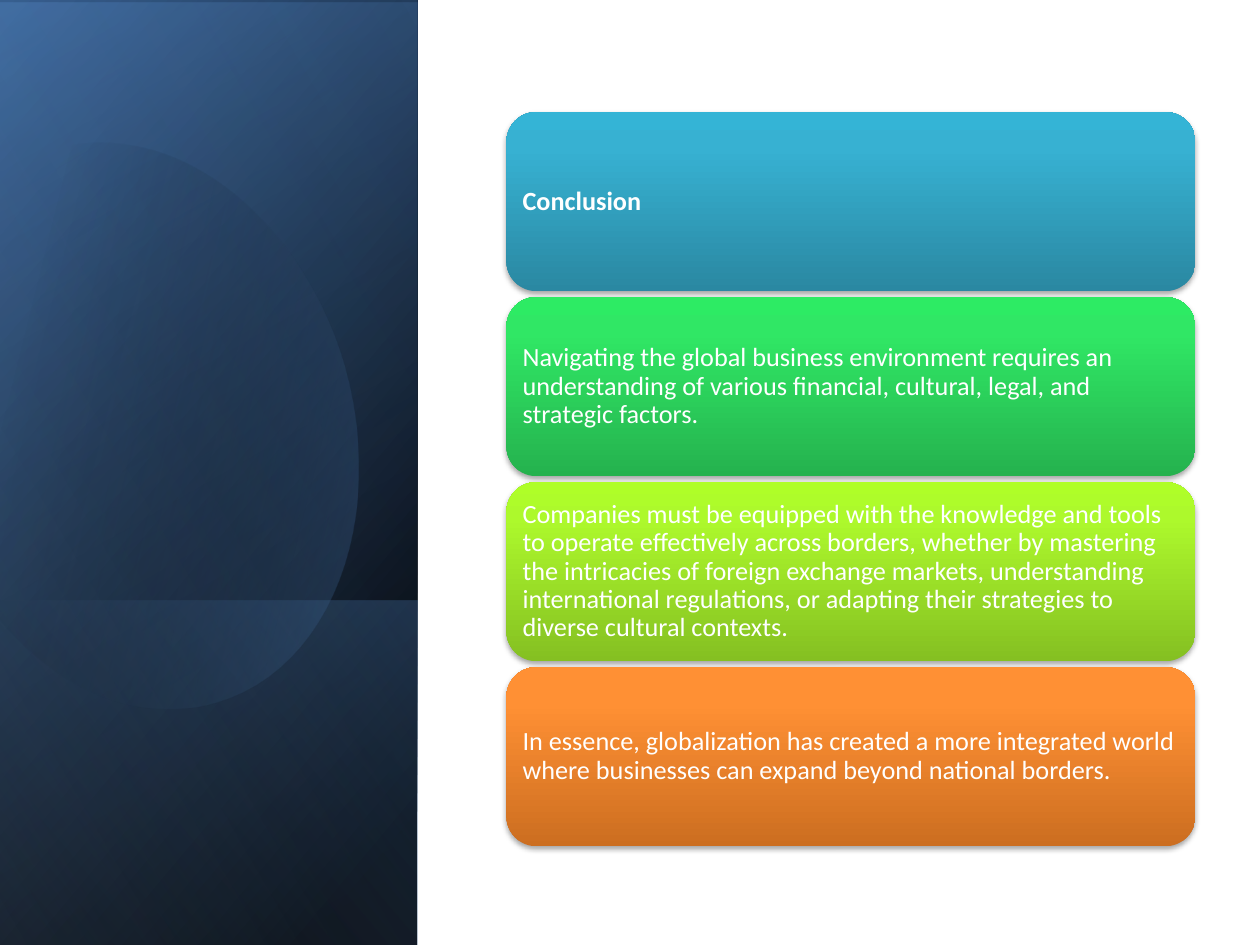
import math

from pptx import Presentation
from pptx.dml import color
from pptx.enum import shapes, text
from pptx.oxml import parse_xml
from pptx.oxml.ns import nsdecls, qn
from pptx.util import Cm, Pt

PANEL_W, SLIDE_W, SLIDE_H = 8.41, 25.4, 19.05

# Words and gradient (bottom, middle, top) of each card
CARDS = [
    ("Conclusion", ("2A88A2", "37B1D2", "34B4D6")),
    ("Navigating the global business environment requires an understanding of "
     "various financial, cultural, legal, and strategic factors.",
     ("25B24E", "30E765", "2DEB64")),
    ("Companies must be equipped with the knowledge and tools to operate "
     "effectively across borders, whether by mastering the intricacies of "
     "foreign exchange markets, understanding international regulations, or "
     "adapting their strategies to diverse cultural contexts.",
     ("85C022", "ADF92C", "AFFE28")),
    ("In essence, globalization has created a more integrated world where "
     "businesses can expand beyond national borders.",
     ("CC6E20", "FF9034", "FF9136")),
]

# Outline of the oval: start, then curves (6 numbers) and lines (2 numbers), in cm
OVAL = [
    (2.44, 2.9),
    (4.34, 3.1, 6.2, 4.88, 6.93, 7.37),
    (7.8, 10.46, 6.65, 13.49, 4.34, 14.15),
    (2.9, 14.58, 1.35, 13.97, 0.18, 12.7),
    (-0.08, 12.4),
    (-0.64, 4.22),
    (-0.38, 3.91),
    (0.05, 3.48, 0.56, 3.18, 1.14, 3),
    (1.57, 2.87, 2.01, 2.84, 2.44, 2.9),
]
OVAL_MID, OVAL_TURN = (3.02, 8.5), -16.1


def rgb(code):
    return color.RGBColor.from_string(code)


def shade(shape, stops, angle):
    """Fill with a linear gradient; stops are (percent, colour, opacity percent)."""
    marks = "".join(
        f'<a:gs pos="{pos * 1000}"><a:srgbClr val="{code}">'
        f'<a:alpha val="{alpha * 1000}"/></a:srgbClr></a:gs>'
        for pos, code, alpha in stops)
    grad = parse_xml(
        f'<a:gradFill {nsdecls("a")} rotWithShape="1"><a:gsLst>{marks}</a:gsLst>'
        f'<a:lin ang="{angle * 60000}" scaled="0"/></a:gradFill>')
    shape.fill.background()
    props = shape._element.spPr
    props.replace(props.find(qn("a:noFill")), grad)
    shape.line.fill.background()
    shape.shadow.inherit = False


def drop(shape):
    """Add a soft shadow below the shape."""
    shape._element.spPr.find(qn("a:effectLst")).append(parse_xml(
        f'<a:outerShdw {nsdecls("a")} blurRad="{Pt(3.1)}" dist="{Pt(1.8)}" '
        f'dir="5400000" rotWithShape="0"><a:srgbClr val="000000">'
        f'<a:alpha val="35000"/></a:srgbClr></a:outerShdw>'))


def write(shape, words, size=15, font="Calibri", ink="FFFFFF", bold=False):
    frame = shape.text_frame
    frame.word_wrap = True
    frame.vertical_anchor = text.MSO_ANCHOR.MIDDLE
    frame.margin_left = frame.margin_right = Cm(0.15)
    frame.margin_top = frame.margin_bottom = Cm(0.15)
    para = frame.paragraphs[0]
    para.alignment = text.PP_ALIGN.LEFT
    para.line_spacing = 0.9
    run = para.add_run()
    run.text = words
    run.font.size, run.font.name, run.font.bold = Pt(size), font, bold
    run.font.color.rgb = rgb(ink)


def layer(slide, top, high, stops, angle):
    """Cover the panel's width with a mirrored rectangle on its side."""
    left = (PANEL_W - high) / 2
    rect = slide.shapes.add_shape(
        shapes.MSO_SHAPE.RECTANGLE, Cm(left), Cm(top - left),
        Cm(high), Cm(PANEL_W))
    rect.rotation = 90
    rect._element.spPr.find(qn("a:xfrm")).set("flipH", "1")
    shade(rect, stops, angle)


def trace(path, steps=24):
    """Turn curves and lines into a list of points."""
    pts = [path[0]]
    for seg in path[1:]:
        if len(seg) == 2:
            pts.append(seg)
            continue
        ends = (pts[-1], seg[:2], seg[2:4], seg[4:])
        for i in range(1, steps + 1):
            t = i / steps
            mix = ((1 - t) ** 3, 3 * t * (1 - t) ** 2, 3 * t * t * (1 - t), t ** 3)
            pts.append(tuple(sum(m * p[k] for m, p in zip(mix, ends))
                             for k in (0, 1)))
    return pts


def oval(slide, stops, angle):
    """Draw the outline upright, then tilt it into place."""
    turn = math.radians(-OVAL_TURN)
    cos, sin = math.cos(turn), math.sin(turn)
    mx, my = OVAL_MID
    pts = [(Cm(mx + (x - mx) * cos - (y - my) * sin),
            Cm(my + (x - mx) * sin + (y - my) * cos)) for x, y in trace(OVAL)]
    pen = slide.shapes.build_freeform(*pts[0])
    pen.add_line_segments(pts[1:], close=True)
    shape = pen.convert_to_shape()
    shape.rotation = OVAL_TURN
    shade(shape, stops, angle)


def card(slide, top, words, tones, bold):
    box = slide.shapes.add_shape(
        shapes.MSO_SHAPE.ROUNDED_RECTANGLE, Cm(10.21), Cm(top), Cm(13.89), Cm(3.61))
    shade(box, [(pos, tone, 100) for pos, tone in zip((0, 80, 100), tones)], 270)
    drop(box)
    write(box, words, bold=bold)


def main():
    deck = Presentation()
    deck.slide_width, deck.slide_height = Cm(SLIDE_W), Cm(SLIDE_H)
    slide = deck.slides.add_slide(deck.slide_layouts[6])

    # Side panel, from back to front
    layer(slide, 0, SLIDE_H, [(8, "000000", 100), (100, "376092", 100)], 50)
    layer(slide, 0.05, SLIDE_H, [(0, "000000", 0), (99, "4F81BD", 46)], 30)
    layer(slide, 12.1, 6.96, [(2, "4F81BD", 29), (100, "000000", 30)], 130)
    oval(slide, [(29, "000000", 0), (100, "4F81BD", 43)], 30)
    layer(slide, 0, SLIDE_H, [(0, "000000", 0), (99, "95B3D7", 11)], 120)

    # Stack of cards, the first as heading
    for i, (words, tones) in enumerate(CARDS):
        card(slide, 2.26 + i * 3.73, words, tones, bold=i == 0)

    deck.save("out.pptx")


if __name__ == "__main__":
    main()
